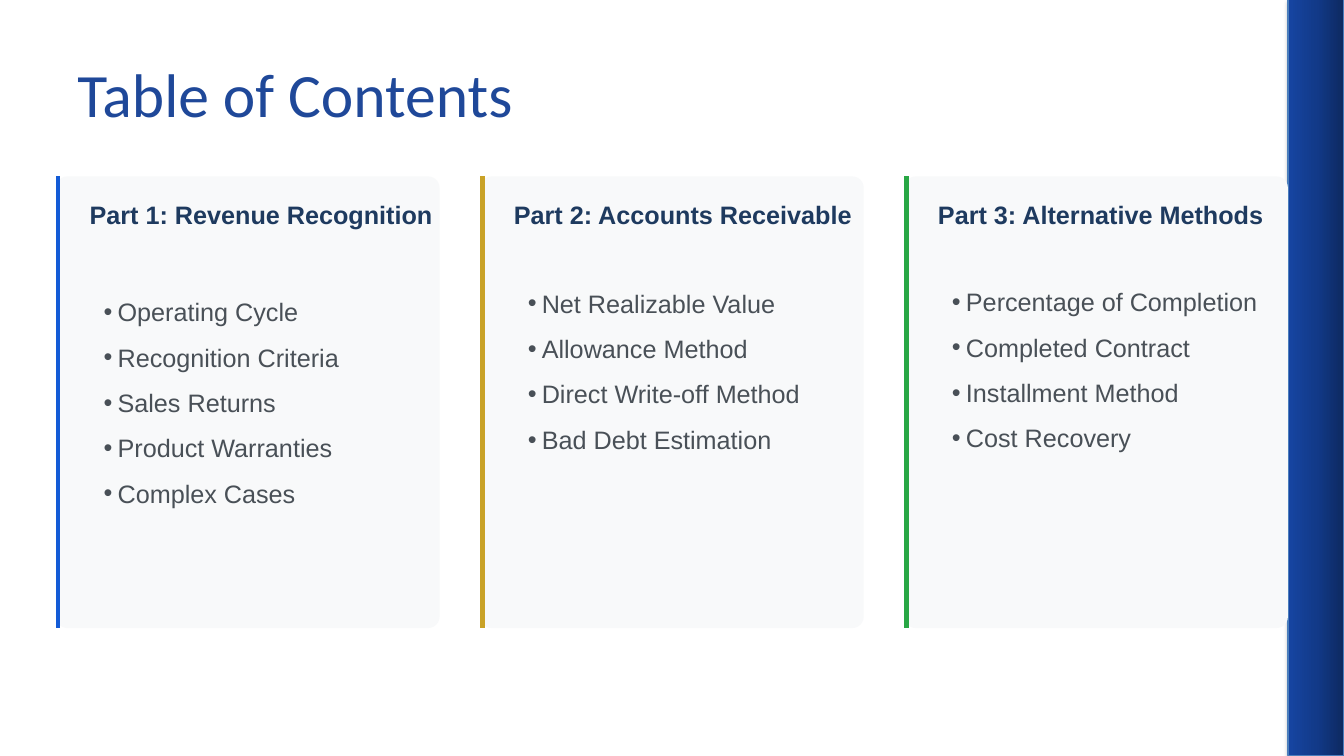
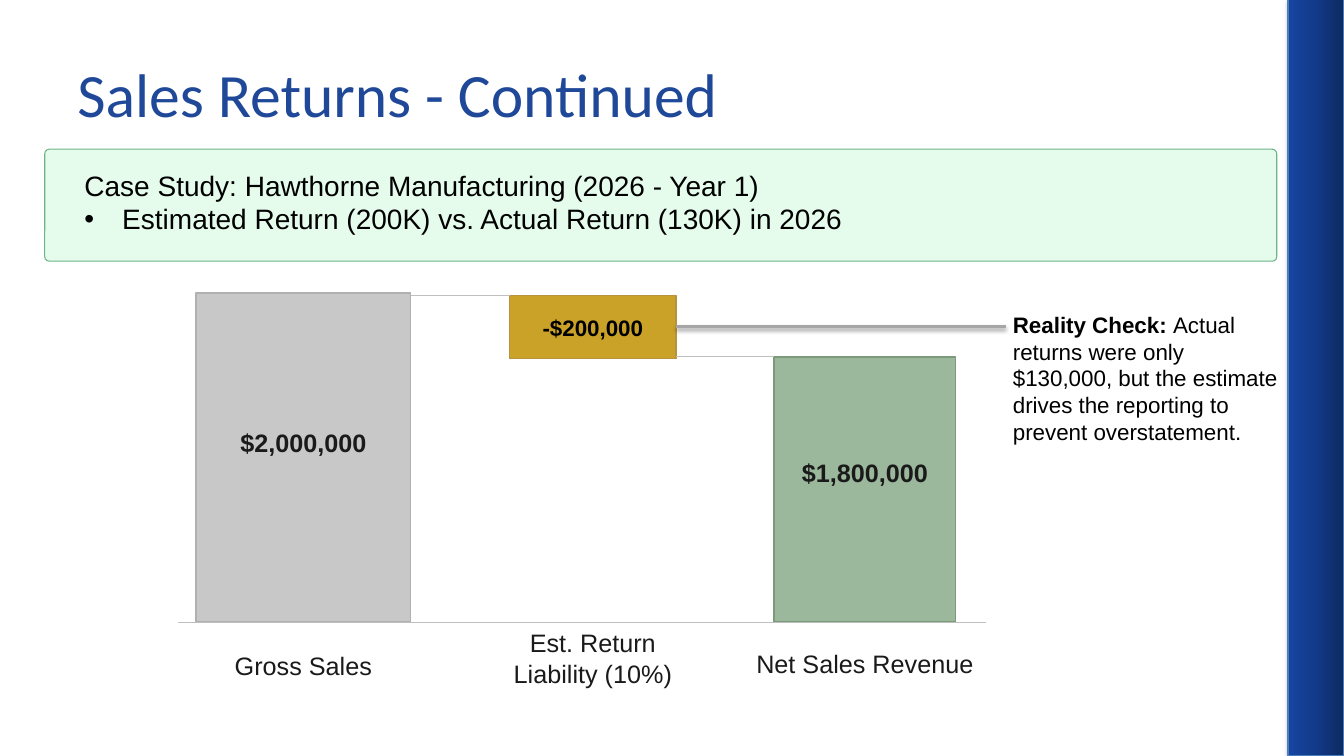
import copy
import dataclasses
import lxml.etree
import pptx
import pptx.dml.color
import pptx.enum.shapes
import pptx.enum.text
import pptx.oxml.ns
import pptx.util

Pt = pptx.util.Pt
RGB = pptx.dml.color.RGBColor.from_string
Kind = pptx.enum.shapes.MSO_SHAPE
Align = pptx.enum.text.PP_ALIGN
Anchor = pptx.enum.text.MSO_ANCHOR
qn = pptx.oxml.ns.qn

COLS, ROWS = 48, 27
CELL = Pt(20)


@dataclasses.dataclass(frozen=True)
class Theme:
    """Colours, fonts and type sizes of the deck."""
    head: str = "Calibri"
    body: str = "Arial"
    title: int = 44
    lead: int = 20
    text: int = 18
    small: int = 16
    blue: str = "1F4899"
    navy: str = "1E3A5F"
    slate: str = "495057"
    ink: str = "1A1A1A"
    black: str = "000000"
    card: str = "F8F9FA"
    band: tuple = ("0D2960", "123A89", "1645A2")
    edge: str = "4B7EBC"
    mint: str = "E5FCED"
    leaf: str = "6DB587"
    rule: str = "BFBFBF"
    link: str = "A6A6A6"
    marks: tuple = ("135BD6", "C9A227", "28A745")
    gross: tuple = ("C8C8C8", "B0B0B0")
    cut: tuple = ("C9A227", "B8923F")
    net: tuple = ("9CB89C", "7A9A7A")


@dataclasses.dataclass(frozen=True)
class Box:
    """A region in grid columns and rows."""
    x: float
    y: float
    w: float
    h: float

    def inner(self, dx, dy, w, h):
        """Return a box placed from this box's top left corner."""
        return Box(self.x + dx, self.y + dy, w, h)

    def emu(self):
        """Return left, top, width and height as lengths."""
        return [grid(n) for n in (self.x, self.y, self.w, self.h)]


THEME = Theme()

TOPICS = [
    ("Part 1: Revenue Recognition", 3.75,
     ["Operating Cycle", "Recognition Criteria", "Sales Returns",
      "Product Warranties", "Complex Cases"]),
    ("Part 2: Accounts Receivable", 3.45,
     ["Net Realizable Value", "Allowance Method",
      "Direct Write-off Method", "Bad Debt Estimation"]),
    ("Part 3: Alternative Methods", 3.4,
     ["Percentage of Completion", "Completed Contract",
      "Installment Method", "Cost Recovery"]),
]


def grid(n):
    """Turn grid cells into a length."""
    return round(n * CELL)


def shade(props, alpha, blur, dist):
    """Give shape properties a soft shadow that falls down."""
    node = props.find(qn("a:effectLst"))
    if node is None:
        node = lxml.etree.SubElement(props, qn("a:effectLst"))
    if alpha:
        drop = lxml.etree.SubElement(
            node, qn("a:outerShdw"), blurRad=str(int(Pt(blur))),
            dist=str(int(Pt(dist))), dir="5400000", rotWithShape="0")
        tone = lxml.etree.SubElement(drop, qn("a:srgbClr"), val=THEME.black)
        lxml.etree.SubElement(tone, qn("a:alpha"), val=str(alpha * 1000))


def block(slide, box, fill, line=None, width=1, kind=Kind.RECTANGLE, curve=0):
    """Draw a flat filled shape."""
    shape = slide.shapes.add_shape(kind, *box.emu())
    shape.shadow.inherit = False
    shape.fill.solid()
    shape.fill.fore_color.rgb = RGB(fill)
    if line:
        shape.line.color.rgb = RGB(line)
        shape.line.width = Pt(width)
    else:
        shape.line.fill.background()
    if curve:
        shape.adjustments[0] = curve
    return shape


def stroke(slide, start, end, color, width, shadow=(0, 0, 0)):
    """Draw a straight line between two grid points."""
    line = slide.shapes.add_connector(
        pptx.enum.shapes.MSO_CONNECTOR.STRAIGHT,
        *[grid(n) for n in (*start, *end)])
    line.line.color.rgb = RGB(color)
    line.line.width = Pt(width)
    shade(line._element.spPr, *shadow)
    return line


def style(run, size, color, bold=False, face=THEME.body):
    """Format one run."""
    run.font.name = face
    run.font.size = Pt(size)
    run.font.bold = bold
    run.font.color.rgb = RGB(color)


def write(slide, box, lines, size, color, bold=False, align=Align.LEFT,
          anchor=Anchor.MIDDLE, inset=None):
    """Add a wrapped text box and return its paragraphs."""
    frame = slide.shapes.add_textbox(*box.emu()).text_frame
    frame.word_wrap = True
    frame.vertical_anchor = anchor
    if inset is not None:
        frame.margin_left = grid(inset)
        frame.margin_top = frame.margin_right = frame.margin_bottom = 0
    frame.text = "\n".join(lines)
    for para in frame.paragraphs:
        para.alignment = align
        for run in para.runs:
            style(run, size, color, bold)
    return frame.paragraphs


def bullet(para, indent):
    """Give a paragraph a hanging bullet."""
    props = para._p.get_or_add_pPr()
    props.set("marL", str(grid(indent)))
    props.set("indent", str(-grid(indent)))
    lxml.etree.SubElement(props, qn("a:buFont"), typeface=THEME.body)
    lxml.etree.SubElement(props, qn("a:buChar"), char="•")


def band(slide, box):
    """Put the shaded side band on the slide's layout."""
    shape = block(slide, box, THEME.edge, THEME.edge, 0.75)
    shape.fill.gradient()
    shape.fill.gradient_angle = 180
    first = shape.fill.gradient_stops[0]._gs
    first.addnext(copy.deepcopy(first))
    for i, stop in enumerate(shape.fill.gradient_stops):
        stop.color.rgb = RGB(THEME.band[i])
        stop.position = i / 2
    shade(shape._element.spPr, 35, 3.1, 1.8)
    slide.slide_layout.shapes._spTree.append(shape._element)


def page(deck, text):
    """Add a title-only slide with a formatted title."""
    slide = deck.slides.add_slide(deck.slide_layouts[5])
    title = slide.shapes.title
    box = Box(2.4, 1.08, 43.2, 4.5)
    title.left, title.top, title.width, title.height = box.emu()
    frame = title.text_frame
    frame.text = text
    frame.vertical_anchor = Anchor.MIDDLE
    frame.paragraphs[0].alignment = Align.LEFT
    style(frame.paragraphs[0].runs[0], THEME.title, THEME.blue,
          face=THEME.head)
    return slide


def card(slide, box, color, head, drop, items):
    """Draw one topic of the contents with its list."""
    block(slide, box, THEME.card, kind=Kind.ROUNDED_RECTANGLE, curve=0.03)
    edge = box.x + 0.08
    stroke(slide, (edge, box.y), (edge, box.y + box.h), color, 3)
    para = write(slide, box.inner(1.2, 1, 12.46, 1.55), [head], THEME.text,
                 THEME.navy, True, anchor=Anchor.TOP, inset=0)[0]
    para.line_spacing = Pt(17.8)
    para.space_after = Pt(15)
    for para in write(slide, box.inner(1.2, drop, 11.5, 10.8), items,
                      THEME.text, THEME.slate, anchor=Anchor.TOP, inset=0.5):
        para.line_spacing = 1.5
        bullet(para, 0.5)


def cards(slide, box):
    """Spread the topics evenly across a region."""
    wide = 13.7
    step = (box.w - wide) / (len(TOPICS) - 1)
    for i, topic in enumerate(TOPICS):
        card(slide, box.inner(i * step, 0, wide, box.h), THEME.marks[i],
             *topic)


def banner(slide, box):
    """Draw the case study box."""
    block(slide, box, THEME.mint, THEME.leaf, 0.75,
          Kind.ROUNDED_RECTANGLE, 0.04)
    paras = write(slide, box.inner(1.06, 0.29, box.w - 1.1, 3.17),
                  ["Case Study: Hawthorne Manufacturing (2026 - Year 1)",
                   "Estimated Return (200K) vs. Actual Return (130K) in 2026"],
                  THEME.lead, THEME.black)
    bullet(paras[1], 1.35)


def bar(slide, box, tones, value, drop, size, color, name, row, wide):
    """Draw one step with its value and its caption."""
    shape = block(slide, box, *tones)
    write(slide, box.inner(0, drop, box.w, 1.6), [value], size, color, True,
          Align.CENTER)
    write(slide, Box(box.x + (box.w - wide) / 2, row - 1.2, wide, 2.4),
          [name], THEME.text, THEME.ink, align=Align.CENTER)
    return shape


def bridge(slide, box):
    """Draw the steps from gross sales to net revenue with a note."""
    base = box.h - 0.04
    gross = box.inner(0.63, 0, 7.67, base)
    cut = box.inner(11.83, 0.08, 5.95, 2.25)
    net = box.inner(21.28, 2.28, 6.48, base - 2.28)
    low = box.y + box.h
    bar(slide, gross, THEME.gross, "$2,000,000", 4.54, THEME.text,
        THEME.ink, "Gross Sales", low + 1.5, 7.9)
    mid = bar(slide, cut, THEME.cut, "-$200,000", 0.36, THEME.small,
              THEME.black, "Est. Return Liability (10%)", low + 1.25, 7.9)
    bar(slide, net, THEME.net, "$1,800,000", 3.31, THEME.text,
        THEME.ink, "Net Sales Revenue", low + 1.45, 8.7)
    for left, right, row in ((gross.x + gross.w, cut.x, cut.y),
                             (cut.x + cut.w, net.x, net.y),
                             (box.x, box.x + box.w, low)):
        stroke(slide, (left, row), (right, row), THEME.rule, 0.75)
    note = box.inner(29.45, 1.03, 10.3, 4)
    row = cut.y + cut.h / 2
    link = stroke(slide, (cut.x + cut.w, row), (note.x + 0.1, row),
                  THEME.link, 2, (38, 3.1, 1.6))
    link.begin_connect(mid, 3)
    para = write(slide, note, ["Reality Check: "], THEME.small,
                 THEME.black, True)[0]
    run = para.add_run()
    run.text = ("Actual returns were only $130,000, but the estimate "
                "drives the reporting to prevent overstatement.")
    style(run, THEME.small, THEME.black)


def main():
    """Build and save the deck."""
    deck = pptx.Presentation()
    deck.slide_width, deck.slide_height = grid(COLS), grid(ROWS)
    slide = page(deck, "Table of Contents")
    band(slide, Box(COLS - 2, 0, 2, ROWS))
    cards(slide, Box(2, 6.3, 44, 16.13))
    slide = page(deck, "Sales Returns - Continued")
    banner(slide, Box(1.6, 5.33, 44, 4))
    bridge(slide, Box(6.37, 10.47, 28.83, 11.78))
    deck.save("out.pptx")


if __name__ == "__main__":
    main()
